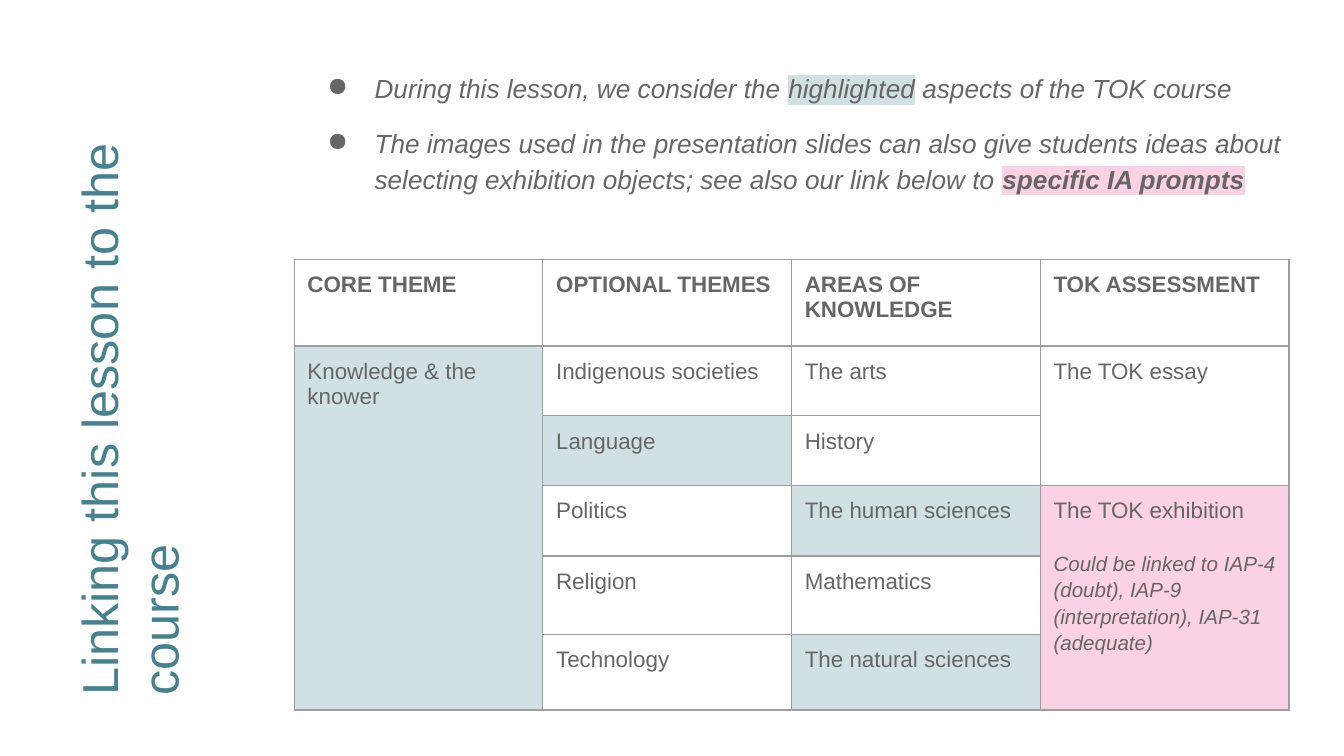
"""Build a slide that links a lesson to the themes of the TOK course."""
from lxml.etree import SubElement
from pptx import Presentation
from pptx.dml.color import RGBColor
from pptx.enum.text import MSO_ANCHOR, MSO_AUTO_SIZE, PP_ALIGN
from pptx.oxml.ns import qn
from pptx.util import Cm, Pt

COLORS = {"title": "45818E", "text": "666666", "teal": "D0E0E3",
          "pink": "FBD1E6", "border": "9E9E9E", "header": "FFFFFF"}
INSET = Cm(0.25)


def add_color(parent, tag, color):
    holder = SubElement(parent, qn(tag))
    SubElement(holder, qn("a:srgbClr")).set("val", COLORS[color])
    return holder


def style(font, size, color="text", bold=False, italic=False):
    font.name = "Arial"
    font.size = Pt(size)
    font.bold = bold
    font.italic = italic
    font.color.rgb = RGBColor.from_string(COLORS[color])


deck = Presentation()
deck.slide_width, deck.slide_height = Cm(25.4), Cm(14.29)
page = deck.slides.add_slide(deck.slide_layouts[5])

title = page.shapes.title
title.left, title.top, title.width, title.height = Cm(-3.35), Cm(5.41), Cm(12.37), Cm(3.61)
title.rotation = 270
title.text_frame.text = "Linking this lesson to the course"
title.text_frame.paragraphs[0].alignment = PP_ALIGN.LEFT
style(title.text_frame.paragraphs[0].font, 27, "title")

notes = page.shapes.add_textbox(Cm(5.56), Cm(1.04), Cm(18.97), Cm(3.1))
for box in (title, notes):
    frame = box.text_frame
    frame.word_wrap = True
    frame.auto_size = MSO_AUTO_SIZE.NONE
    frame.vertical_anchor = MSO_ANCHOR.TOP
    frame.margin_left = frame.margin_right = frame.margin_top = frame.margin_bottom = INSET

bullets = [
    [("During this lesson, we consider the ", None, False),
     ("highlighted", "teal", False),
     (" aspects of the TOK course", None, False)],
    [("The images used in the presentation slides can also give students ideas about "
      "selecting exhibition objects; see also our link below to ", None, False),
     ("specific IA prompts", "pink", True)],
]
for index, spans in enumerate(bullets):
    para = notes.text_frame.paragraphs[0] if index == 0 else notes.text_frame.add_paragraph()
    para.line_spacing = 1.15
    if index:
        para.space_before = Pt(10)
    properties = para._p.get_or_add_pPr()
    properties.set("marL", str(Cm(1.27)))
    properties.set("indent", str(-Cm(0.89)))
    add_color(properties, "a:buClr", "text")
    SubElement(properties, qn("a:buChar")).set("char", "●")
    style(para.font, 14, italic=True)
    for words, highlight, bold in spans:
        span = para.add_run()
        span.text = words
        if bold:
            span.font.bold = True
        if highlight:
            add_color(span._r.get_or_add_rPr(), "a:highlight", highlight)

rows = [
    ["CORE THEME", "OPTIONAL THEMES", "AREAS OF KNOWLEDGE", "TOK ASSESSMENT"],
    ["Knowledge & the knower", "Indigenous societies", "The arts", "The TOK essay"],
    [None, "Language", "History", None],
    [None, "Politics", "The human sciences", "The TOK exhibition"],
    [None, "Religion", "Mathematics", None],
    [None, "Technology", "The natural sciences", None],
]
row_heights = [1.64, 1.32, 1.31, 1.34, 1.48, 1.43]
fills = {"Knowledge & the knower": "teal", "Language": "teal", "The human sciences": "teal",
         "The natural sciences": "teal", "The TOK exhibition": "pink"}
fills.update({heading: "header" for heading in rows[0]})

themes = page.shapes.add_table(len(rows), len(rows[0]), Cm(5.56), Cm(4.9),
                               Cm(18.8), Cm(sum(row_heights))).table
themes.horz_banding = False
for column in themes.columns:
    column.width = Cm(4.7)
for row, height in zip(themes.rows, row_heights):
    row.height = Cm(height)
for first, last, column in ((1, 5, 0), (1, 2, 3), (3, 5, 3)):
    themes.cell(first, column).merge(themes.cell(last, column))

for row_index, texts in enumerate(rows):
    for column_index, words in enumerate(texts):
        cell = themes.cell(row_index, column_index)
        cell.margin_left = cell.margin_right = cell.margin_top = cell.margin_bottom = INSET
        cell.vertical_anchor = MSO_ANCHOR.TOP
        for side in ("a:lnL", "a:lnR", "a:lnT", "a:lnB"):
            border = add_color(cell._tc.get_or_add_tcPr(), side, "border")
            color = border[0]
            SubElement(border, qn("a:solidFill")).append(color)
            border.set("w", str(Pt(0.75)))
        if words in fills:
            cell.fill.solid()
            cell.fill.fore_color.rgb = RGBColor.from_string(COLORS[fills[words]])
        else:
            cell.fill.background()
        if words:
            cell.text = words
            style(cell.text_frame.paragraphs[0].font, 12, bold=row_index == 0)

para = themes.cell(3, 3).text_frame.add_paragraph()
para.text = "Could be linked to IAP-4 (doubt), IAP-9 (interpretation), IAP-31 (adequate)"
para.line_spacing = 1.15
para.space_before = Pt(14)
style(para.font, 11, italic=True)

deck.save("out.pptx")
